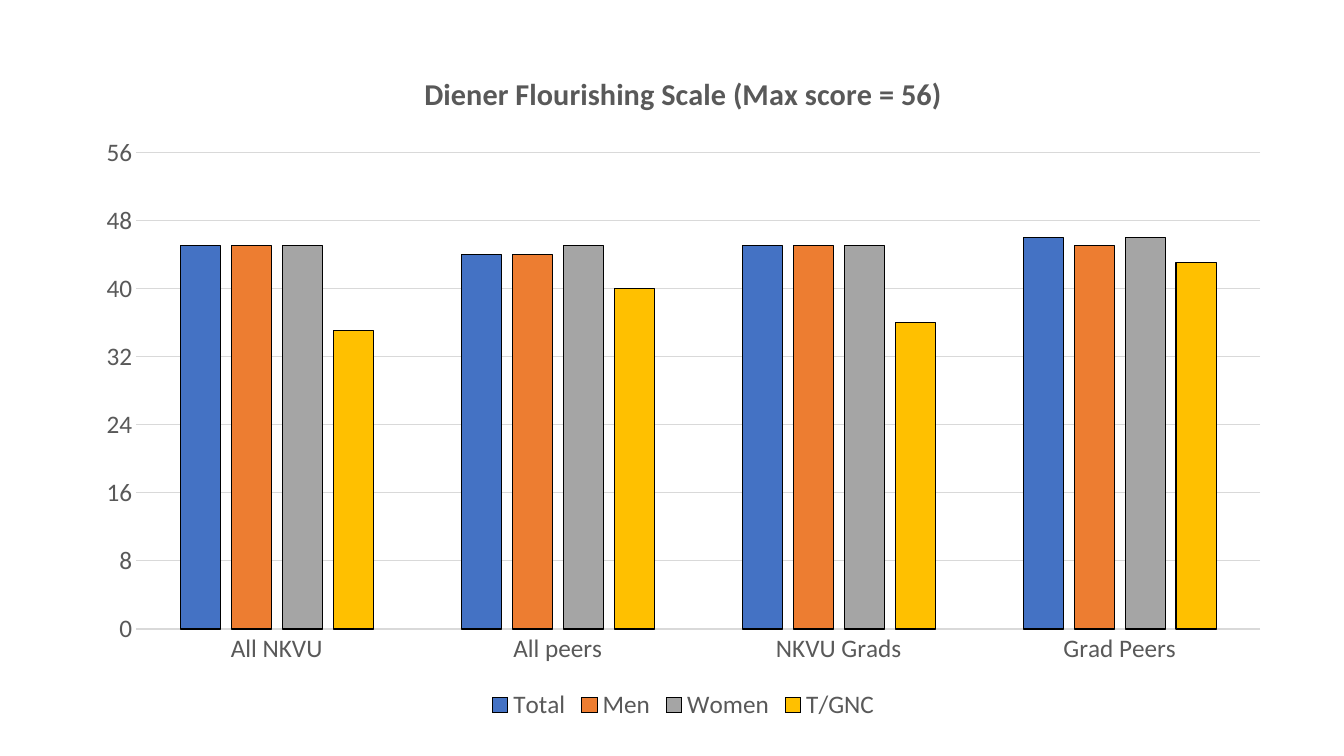
"""Build a slide with a clustered column chart of flourishing scores."""
from dataclasses import dataclass

from pptx import Presentation
from pptx.chart.chart import Chart
from pptx.chart.data import CategoryChartData
from pptx.dml.color import RGBColor
from pptx.dml.line import LineFormat
from pptx.enum.chart import XL_CHART_TYPE, XL_LEGEND_POSITION, XL_TICK_MARK
from pptx.util import Inches, Pt

BLACK = RGBColor(0x00, 0x00, 0x00)
GREY_TEXT = RGBColor(0x59, 0x59, 0x59)
GREY_LINE = RGBColor(0xD9, 0xD9, 0xD9)
BLUE = RGBColor(0x44, 0x72, 0xC4)
ORANGE = RGBColor(0xED, 0x7D, 0x31)
GREY = RGBColor(0xA5, 0xA5, 0xA5)
GOLD = RGBColor(0xFF, 0xC0, 0x00)

FONT = "Calibri"
TITLE = "Diener Flourishing Scale (Max score = 56)"
MAX_SCORE = 56
GROUPS = ("All NKVU", "All peers", "NKVU Grads", "Grad Peers")


@dataclass(frozen=True)
class Series:
    name: str
    color: RGBColor
    scores: tuple[int, ...]


SERIES = (
    Series("Total", BLUE, (45, 44, 45, 46)),
    Series("Men", ORANGE, (45, 44, 45, 45)),
    Series("Women", GREY, (45, 45, 45, 46)),
    Series("T/GNC", GOLD, (35, 40, 36, 43)),
)


def style_font(font, *, size: float = 18, color: RGBColor = GREY_TEXT, bold: bool = False) -> None:
    font.name, font.size, font.bold = FONT, Pt(size), bold
    font.color.rgb = color


def style_line(line: LineFormat, color: RGBColor) -> None:
    line.color.rgb = color
    line.width = Pt(0.75)


def add_title(chart: Chart, text: str, **fmt) -> None:
    chart.has_title = True
    chart.chart_title.include_in_layout = False
    r = chart.chart_title.text_frame.paragraphs[0].add_run()
    r.text = text
    style_font(r.font, **fmt)


def style_axes(chart: Chart) -> None:
    for axis in (chart.category_axis, chart.value_axis):
        axis.major_tick_mark = axis.minor_tick_mark = XL_TICK_MARK.NONE
        style_font(axis.tick_labels.font)
    style_line(chart.category_axis.format.line, GREY_LINE)
    scores = chart.value_axis
    scores.minimum_scale, scores.maximum_scale, scores.major_unit = 0, MAX_SCORE, 8
    scores.format.line.fill.background()
    scores.has_major_gridlines = True
    style_line(scores.major_gridlines.format.line, GREY_LINE)


def style_columns(chart: Chart) -> None:
    plot = chart.plots[0]
    plot.gap_width, plot.overlap, plot.vary_by_categories = 219, -27, False
    for columns, series in zip(plot.series, SERIES):
        columns.format.fill.solid()
        columns.format.fill.fore_color.rgb = series.color
        style_line(columns.format.line, BLACK)


def add_legend(chart: Chart) -> None:
    chart.has_legend = True
    chart.legend.position = XL_LEGEND_POSITION.BOTTOM
    chart.legend.include_in_layout = False
    style_font(chart.legend.font)


def main() -> None:
    prs = Presentation()
    prs.slide_width, prs.slide_height = Inches(13.33), Inches(7.5)
    slide = prs.slides.add_slide(prs.slide_layouts[6])
    data = CategoryChartData(number_format="0")
    data.categories = GROUPS
    for series in SERIES:
        data.add_series(series.name, series.scores)
    w, h = prs.slide_width, prs.slide_height
    chart = slide.shapes.add_chart(
        XL_CHART_TYPE.COLUMN_CLUSTERED,
        int(w * 0.0615), int(h * 0.064), int(w * 0.894), int(h * 0.895), data,
    ).chart
    style_font(chart.font, color=BLACK)
    add_title(chart, TITLE, size=21.6, bold=True)
    style_axes(chart)
    style_columns(chart)
    add_legend(chart)
    prs.save("out.pptx")


if __name__ == "__main__":
    main()
